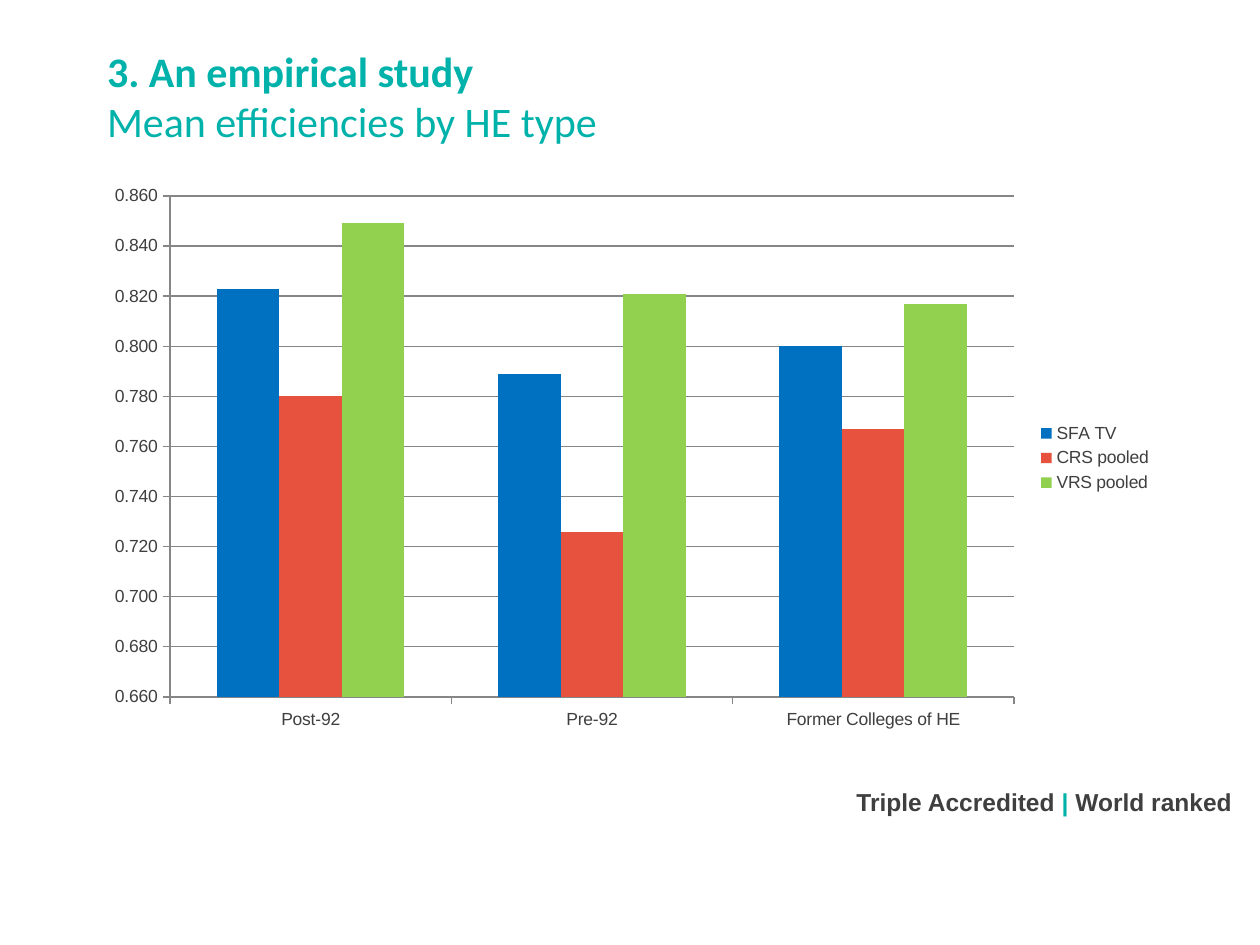
from pptx import Presentation
from pptx.chart.data import CategoryChartData
from pptx.dml.color import RGBColor
from pptx.enum.chart import XL_CHART_TYPE as ChartType, XL_LEGEND_POSITION as LegendPosition
from pptx.enum.chart import XL_TICK_MARK as TickMark
from pptx.enum.text import MSO_ANCHOR as Anchor, PP_ALIGN as Align
from pptx.oxml import parse_xml
from pptx.oxml.ns import nsdecls
from pptx.util import Pt

PX = 914400 // 126

TEAL = RGBColor(0x00, 0xB2, 0xAA)
DARK = RGBColor(0x3F, 0x3F, 0x3F)
GREY = RGBColor(0x86, 0x86, 0x86)
BLUE = RGBColor(0x00, 0x70, 0xC0)
RED = RGBColor(0xE6, 0x52, 0x3E)
GREEN = RGBColor(0x92, 0xD0, 0x50)

# Content: runs are (text, colour, bold)
TITLE = [("3. An empirical study", TEAL, True), ("\n", TEAL, True),
         ("Mean efficiencies by HE type", TEAL, False)]
FOOTER = [("Triple Accredited", DARK, True), (" | ", TEAL, True),
          ("World ranked", DARK, True)]
CATEGORIES = ["Post-92", "Pre-92", "Former Colleges of HE"]
SERIES = [
    ("SFA TV", BLUE, (0.823, 0.789, 0.8)),
    ("CRS pooled", RED, (0.78, 0.726, 0.767)),
    ("VRS pooled", GREEN, (0.849, 0.821, 0.817)),
]

# Places in px: left, top, width, height
TITLE_BOX = (94, 37, 1071, 101)
CHART_BOX = (94, 175, 1071, 566)
PLOT_BOX = (170, 196, 844, 501)
FOOTER_BOX = (838, 780, 407, 43)


def scaled(box):
    return [length * PX for length in box]


def write_text(shape, runs, font="Arial", size=14, align=Align.LEFT,
               anchor=Anchor.TOP, inset=6):
    frame = shape.text_frame
    frame.word_wrap = True
    frame.vertical_anchor = anchor
    frame.margin_left = frame.margin_right = 13 * PX
    frame.margin_top = frame.margin_bottom = inset * PX
    paragraph = frame.paragraphs[0]
    paragraph.alignment = align
    for text, colour, bold in runs:
        if text == "\n":
            paragraph.add_line_break()
            continue
        run = paragraph.add_run()
        run.text = text
        run.font.name = font
        run.font.size = Pt(size)
        run.font.bold = bold
        run.font.color.rgb = colour


def place_plot(chart):
    left, top, width, height = CHART_BOX
    x, y, w, h = PLOT_BOX
    shares = {"x": (x - left) / width, "y": (y - top) / height,
              "w": w / width, "h": h / height}
    modes = "".join(f'<c:{name}Mode val="edge"/>' for name in "xy")
    sizes = "".join(f'<c:{name} val="{share:.4f}"/>' for name, share in shares.items())
    plot_area = chart.plots[0]._element.getparent()
    for old in plot_area.findall("{*}layout"):
        plot_area.remove(old)
    plot_area.insert(0, parse_xml(
        f'<c:layout {nsdecls("c")}><c:manualLayout><c:layoutTarget val="inner"/>'
        f'{modes}{sizes}</c:manualLayout></c:layout>'))


def add_chart(slide):
    data = CategoryChartData(number_format="0.000")
    data.categories = CATEGORIES
    for name, _, values in SERIES:
        data.add_series(name, values)
    chart = slide.shapes.add_chart(
        ChartType.COLUMN_CLUSTERED, *scaled(CHART_BOX), data).chart
    chart.has_title = False
    chart.font.name = "Arial"
    chart.font.size = Pt(10)
    chart.font.color.rgb = DARK

    # Columns
    plot = chart.plots[0]
    plot.vary_by_categories = False
    plot.gap_width = 150
    plot.overlap = 0
    for series, (_, colour, _) in zip(plot.series, SERIES):
        series.invert_if_negative = False
        series.format.fill.solid()
        series.format.fill.fore_color.rgb = colour

    # Axes and legend
    value_axis = chart.value_axis
    value_axis.minimum_scale, value_axis.maximum_scale = 0.66, 0.86
    value_axis.major_unit = 0.02
    value_axis.has_major_gridlines = True
    value_axis.tick_labels.number_format = "0.000"
    value_axis.tick_labels.number_format_is_linked = False
    for axis in (chart.category_axis, value_axis):
        axis.major_tick_mark = TickMark.OUTSIDE
    for part in (chart.category_axis, value_axis, value_axis.major_gridlines):
        part.format.line.color.rgb = GREY
        part.format.line.width = Pt(0.75)
    chart.has_legend = True
    chart.legend.position = LegendPosition.RIGHT
    chart.legend.include_in_layout = False
    place_plot(chart)


def main():
    presentation = Presentation()
    presentation.slide_width = 1260 * PX
    presentation.slide_height = 945 * PX
    slide = presentation.slides.add_slide(presentation.slide_layouts[5])

    # Title
    title = slide.shapes.title
    title.left, title.top, title.width, title.height = scaled(TITLE_BOX)
    write_text(title, TITLE, font="Calibri", size=24, inset=8)

    add_chart(slide)

    # Footer
    footer = slide.shapes.add_textbox(*scaled(FOOTER_BOX))
    write_text(footer, FOOTER, align=Align.RIGHT, anchor=Anchor.MIDDLE)

    presentation.save("out.pptx")


if __name__ == "__main__":
    main()
